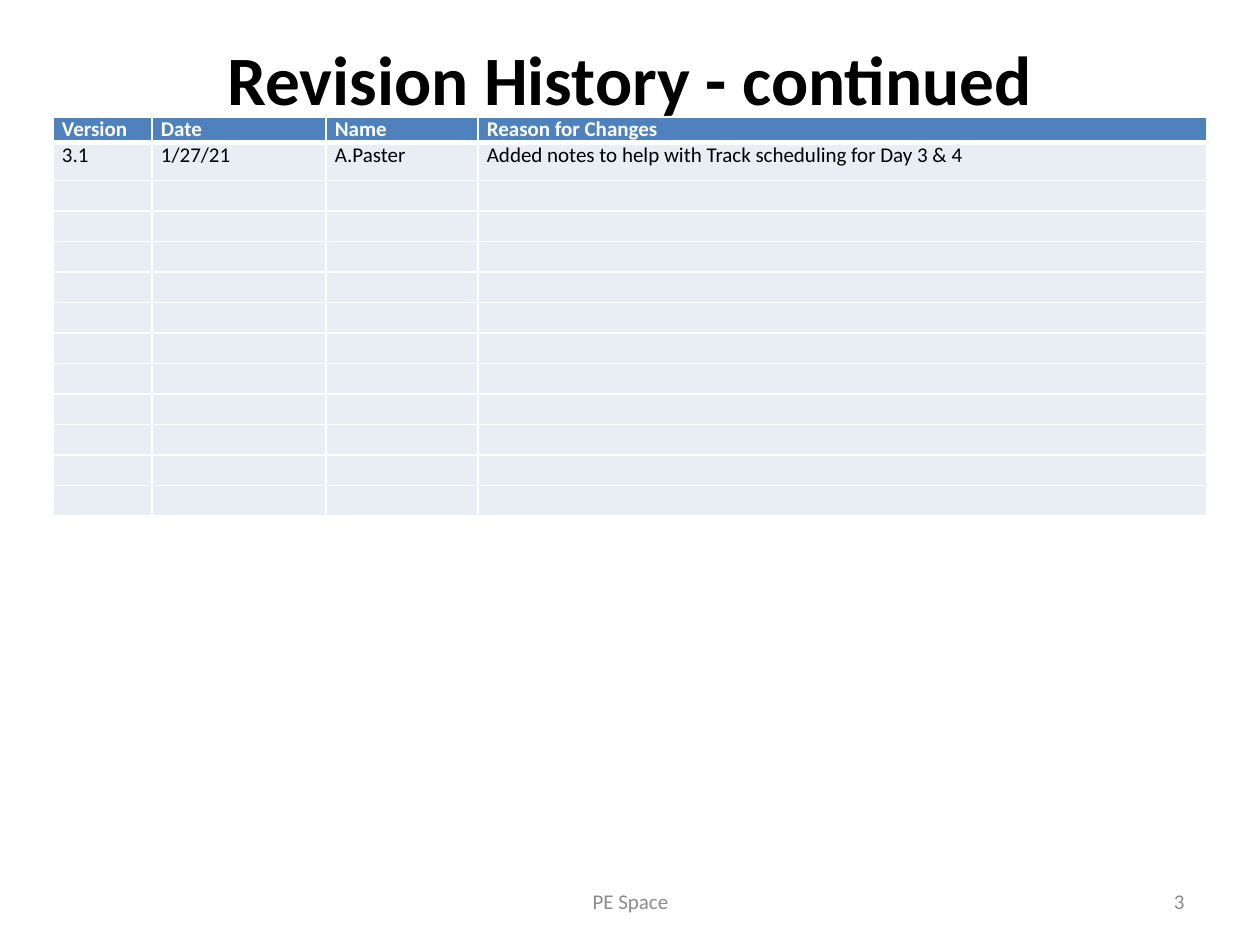
from lxml.etree import SubElement
from pptx import Presentation
from pptx.dml.color import RGBColor
from pptx.enum.text import MSO_ANCHOR, PP_ALIGN
from pptx.oxml import parse_xml
from pptx.oxml.ns import nsdecls, qn
from pptx.util import Pt

PX = 914400 / 126


def px(n):
    return round(n * PX)


def style(para, size, color, bold=False):
    for run in para.runs:
        run.font.name = "Calibri"
        run.font.size = Pt(size)
        run.font.bold = bold
        run.font.color.rgb = RGBColor.from_string(color)


prs = Presentation()
prs.slide_width, prs.slide_height = px(1260), px(945)
slide = prs.slides.add_slide(prs.slide_layouts[6])

# Title and footer
labels = [
    ("Revision History - continued", (63, 36, 1134, 158), 39.6, "000000", True,
     PP_ALIGN.CENTER, MSO_ANCHOR.TOP),
    ("PE Space", (431, 876, 399, 50), 12, "8C8C8C", False,
     PP_ALIGN.CENTER, MSO_ANCHOR.MIDDLE),
    ("3", (903, 876, 294, 50), 12, "8C8C8C", False,
     PP_ALIGN.RIGHT, MSO_ANCHOR.MIDDLE),
]
for text, place, size, color, bold, align, anchor in labels:
    frame = slide.shapes.add_textbox(*[px(n) for n in place]).text_frame
    frame.word_wrap = True
    frame.vertical_anchor = anchor
    frame.margin_top = frame.margin_bottom = 0
    frame.text = text
    frame.paragraphs[0].alignment = align
    style(frame.paragraphs[0], size, color, bold)

# Revision table
heads = ["Version", "Date", "Name", "Reason for Changes"]
entry = ["3.1", "1/27/21", "A.Paster",
         "Added notes to help with Track scheduling for Day 3 & 4"]
spare = 11
rows = [heads, entry] + [[""] * len(heads)] * spare
widths = [99, 174, 152, 729]
heights = [px(25), px(38)] + [px(336) // spare] * spare

table = slide.shapes.add_table(len(rows), len(heads), px(53), px(117),
                               px(sum(widths)), sum(heights)).table
for col, width in zip(table.columns, widths):
    col.width = px(width)

for r, row in enumerate(rows):
    table.rows[r].height = heights[r]
    head = r == 0
    for c, text in enumerate(row):
        cell = table.cell(r, c)
        cell.margin_left = cell.margin_right = px(9)
        cell.margin_top = cell.margin_bottom = 0
        cell.fill.solid()
        cell.fill.fore_color.rgb = RGBColor.from_string("4F81BD" if head else "E9EDF4")
        para = cell.text_frame.paragraphs[0]
        if text:
            para.text = text
            style(para, 12, "FFFFFF" if head else "000000", head)
        else:
            # Keeps an empty cell from growing its row
            SubElement(para._p, qn("a:endParaRPr"), sz="1200")
        props = cell._tc.get_or_add_tcPr()
        for i, side in enumerate(["L", "R", "T", "B"]):
            thick = (r, side) in [(0, "B"), (1, "T")]
            props.insert(i, parse_xml(
                f'<a:ln{side} {nsdecls("a")} w="{Pt(3 if thick else 1)}">'
                f'<a:solidFill><a:srgbClr val="FFFFFF"/></a:solidFill></a:ln{side}>'))

prs.save("out.pptx")
